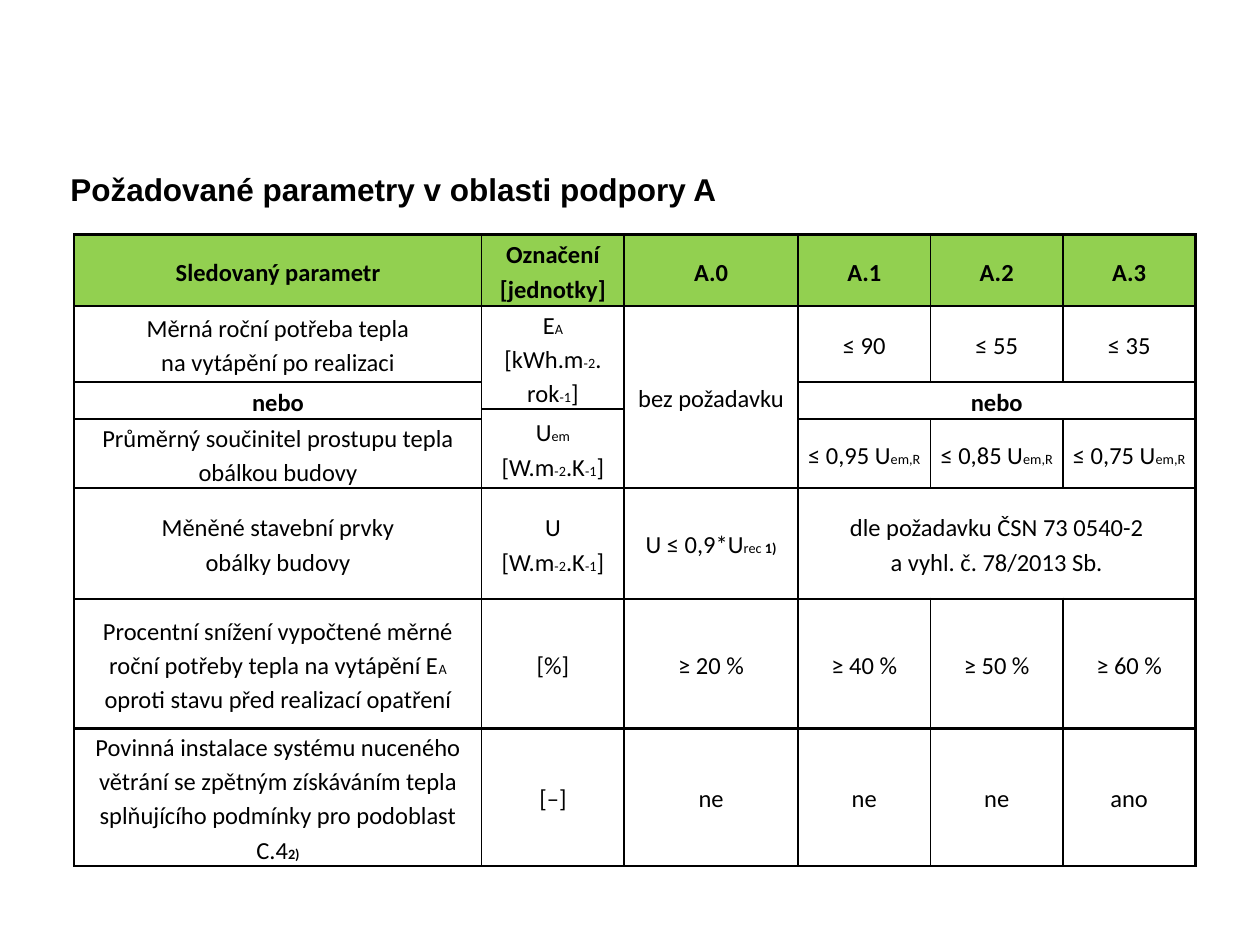
import pptx
import pptx.util
import pptx.dml.color
import pptx.enum.text
from lxml import etree

Pt = pptx.util.Pt
Rgb = pptx.dml.color.RGBColor.from_string
Align = pptx.enum.text.PP_ALIGN
Mid = pptx.enum.text.MSO_ANCHOR.MIDDLE
NS = "http://schemas.openxmlformats.org/drawingml/2006/main"

THEME = {
    "ink": "000000", "head": "92D050",
    "title": ("Arial", 18), "cell": ("Calibri", 14),
    "thick": 1.5, "thin": 1, "space": 1.15, "pad": 3.6,
    "plain": "{2D5ABB26-0587-4C30-8999-92F81FD0307C}",
}

TITLE = "Požadované parametry v\u00a0oblasti podpory A"
COLS = [232.8, 81.4, 99.4] + [75.7] * 3
ROWS = [41, 43.2, 12.2, 5.8, 36.7, 63.4, 74.2, 74.2]
THIN_ROWS = (2, 3, 4)  # row edges inside the "nebo" block

# Runs are parted by "|"; a run may open with _ (sub), ^ (super), * (bold).
# "//" starts a new paragraph, a newline breaks the line.
# (row, column, text[, row span, column span])
CELLS = [
    (0, 0, "*Sledovaný parametr"),
    (0, 1, "*Označení [jednotky]"),
    (0, 2, "*A.0"),
    (0, 3, "*A.1"),
    (0, 4, "*A.2"),
    (0, 5, "*A.3"),
    (1, 0, "Měrná roční potřeba tepla\nna vytápění po realizaci"),
    (1, 1, "E|_A\n|[kWh.m|^-2|. rok|^-1|]", 2, 1),
    (1, 2, "bez požadavku", 4, 1),
    (1, 3, "≤ 90"),
    (1, 4, "≤ 55"),
    (1, 5, "≤ 35"),
    (2, 0, "*nebo", 2, 1),
    (2, 3, "*nebo", 2, 3),
    (3, 1, "U|_em\n|[W.m|^-2|.K|^-1|]", 2, 1),
    (4, 0, "Průměrný součinitel prostupu tepla obálkou budovy"),
    (4, 3, "≤ 0,95 U|_em,R"),
    (4, 4, "≤ 0,85 U|_em,R"),
    (4, 5, "≤ 0,75 U|_em,R"),
    (5, 0, "Měněné stavební prvky\nobálky budovy"),
    (5, 1, "U\n[W.m|^-2|.K|^-1|]"),
    (5, 2, "U ≤ 0,9*U|_rec |^*1)"),
    (5, 3, "dle požadavku ČSN 73\u00a00540-2//a vyhl. č. 78/2013 Sb.", 1, 3),
    (6, 0, "Procentní snížení vypočtené měrné roční potřeby tepla na vytápění E"
           "|_A| oproti stavu před realizací opatření"),
    (6, 1, "[%]"),
    (6, 2, "≥ 20 %"),
    (6, 3, "≥ 40 %"),
    (6, 4, "≥ 50 %"),
    (6, 5, "≥ 60 %"),
    (7, 0, "Povinná instalace systému nuceného větrání se zpětným získáváním "
           "tepla splňujícího podmínky pro podoblast C.4|^*2)"),
    (7, 1, "[–]"),
    (7, 2, "ne"),
    (7, 3, "ne"),
    (7, 4, "ne"),
    (7, 5, "ano"),
]


def add_run(para, text, face, bold=False, base=0):
    run = para.add_run()
    run.text = text
    font = run.font
    font.name, font.size = face[0], Pt(face[1])
    font.bold = bold
    font.color.rgb = Rgb(THEME["ink"])
    if base:
        font._element.set("baseline", str(base))


def add_break(para, face):
    """Break the line, keeping the break at the text size."""
    para.add_line_break()
    mark = etree.SubElement(para._p[-1], f"{{{NS}}}rPr")
    mark.set("sz", str(face[1] * 100))


def write(para, text):
    face = THEME["cell"]
    para.alignment = Align.CENTER
    para.line_spacing = THEME["space"]
    for part in text.split("|"):
        base = {"_": -25, "^": 30}.get(part[0], 0)
        part = part[1:] if base else part
        bold = part.startswith("*")
        part = part[1:] if bold else part
        for i, line in enumerate(part.split("\n")):
            if i:
                add_break(para, face)
            if line:
                add_run(para, line, face, bold, base)


def add_edge(cell, side, width):
    line = etree.SubElement(cell._tc.get_or_add_tcPr(), f"{{{NS}}}ln{side}")
    line.set("w", str(Pt(width)))
    fill = etree.SubElement(line, f"{{{NS}}}solidFill")
    etree.SubElement(fill, f"{{{NS}}}srgbClr").set("val", THEME["ink"])


def style(cell, row, col, area):
    """Set padding, borders and fill; area is the merged block's edges."""
    top, left, low, right = area
    cell.margin_left = cell.margin_right = Pt(THEME["pad"])
    cell.margin_top = cell.margin_bottom = 0
    cell.vertical_anchor = Mid
    first = (row, col) == (top, left)
    thick, thin = THEME["thick"], THEME["thin"]
    sides = [
        ("L", left, col == left), ("R", right, col + 1 == right),
        ("T", top, row == top), ("B", low, row + 1 == low),
    ]
    for side, edge, outer in sides:
        if side in "LR":
            width = thick if edge in (0, len(COLS)) else thin
        else:
            width = thin if edge in THIN_ROWS else thick
        if first or outer:
            add_edge(cell, side, width)
    if row == 0:
        cell.fill.solid()
        cell.fill.fore_color.rgb = Rgb(THEME["head"])
    else:
        cell.fill.background()


def add_title(slide):
    title = slide.shapes.title
    title.left, title.top = Pt(33), Pt(93.6)
    title.width, title.height = Pt(587.5), Pt(29)
    frame = title.text_frame
    frame.word_wrap = True
    frame.auto_size = pptx.enum.text.MSO_AUTO_SIZE.NONE
    frame.vertical_anchor = Mid
    para = frame.paragraphs[0]
    para.alignment = Align.LEFT
    add_run(para, TITLE, THEME["title"], True)


def add_grid(slide):
    table = slide.shapes.add_table(
        len(ROWS), len(COLS), Pt(42.5), Pt(134),
        Pt(sum(COLS)), Pt(sum(ROWS))).table
    table.horz_banding = table.first_row = False
    table._tbl.tblPr.find(f"{{{NS}}}tableStyleId").text = THEME["plain"]
    for col, width in zip(table.columns, COLS):
        col.width = Pt(width)
    for row, height in zip(table.rows, ROWS):
        row.height = Pt(height)
    for top, left, text, *span in CELLS:
        down, wide = span or (1, 1)
        low, right = top + down, left + wide
        cell = table.cell(top, left)
        if span:
            cell.merge(table.cell(low - 1, right - 1))
        for r in range(top, low):
            for c in range(left, right):
                style(table.cell(r, c), r, c, (top, left, low, right))
        frame = cell.text_frame
        for i, part in enumerate(text.split("//")):
            write(frame.add_paragraph() if i else frame.paragraphs[0], part)


def main():
    deck = pptx.Presentation()
    deck.slide_width, deck.slide_height = Pt(720), Pt(540)
    slide = deck.slides.add_slide(deck.slide_layouts[5])
    add_title(slide)
    add_grid(slide)
    deck.save("out.pptx")


if __name__ == "__main__":
    main()
